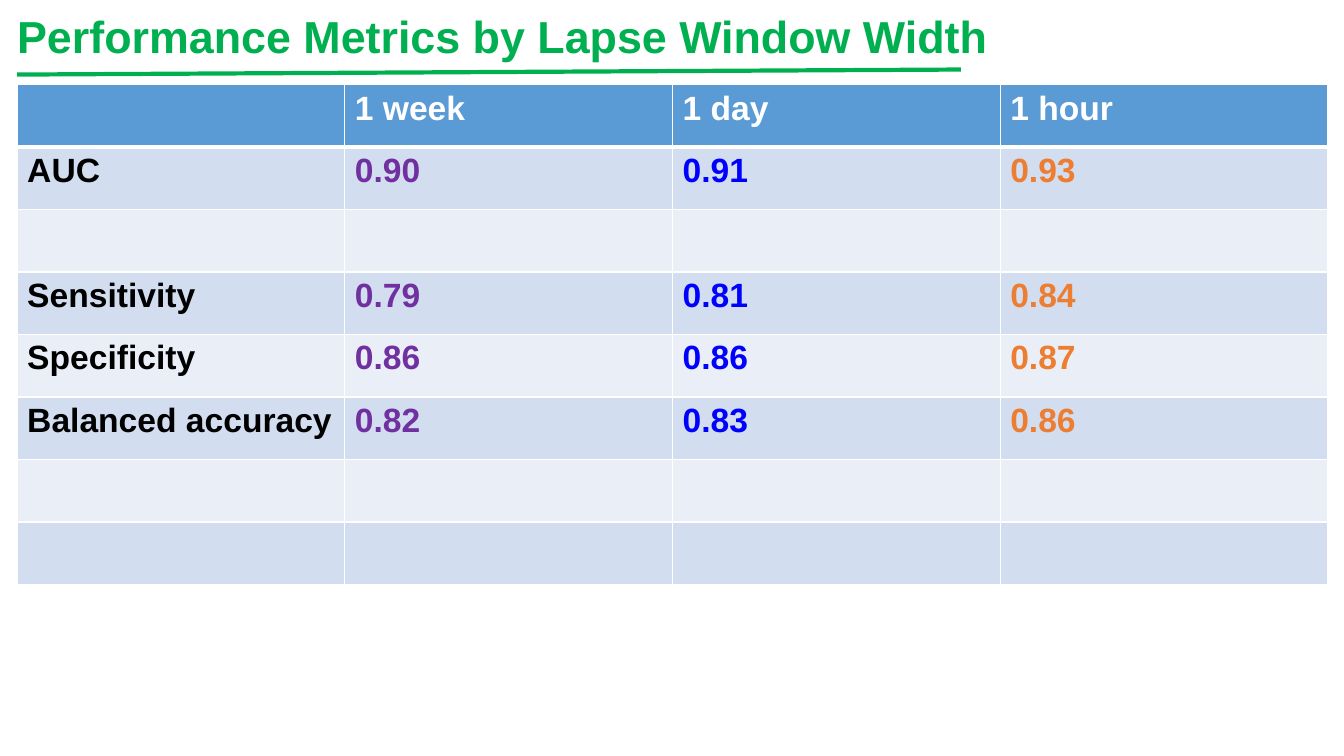
from dataclasses import dataclass

from lxml import etree
from pptx import Presentation
from pptx import util as u
from pptx.dml.color import RGBColor
from pptx.enum import shapes, text
from pptx.oxml.ns import qn


@dataclass(frozen=True)
class Theme:
    font: str = "Arial"
    title_size: int = 32
    table_size: int = 24
    accent: str = "00B050"
    border: str = "FFFFFF"
    header_fill: str = "5B9BD5"
    header_text: str = "FFFFFF"
    bands: tuple = ("D2DEEF", "EAEFF7")
    columns: tuple = ("000000", "7030A0", "0000FF", "ED7D31")
    thin: int = 1
    thick: int = 3


METRICS = [
    ("", "1 week", "1 day", "1 hour"),
    ("AUC", "0.90", "0.91", "0.93"),
    ("",) * 4,
    ("Sensitivity", "0.79", "0.81", "0.84"),
    ("Specificity", "0.86", "0.86", "0.87"),
    ("Balanced accuracy", "0.82", "0.83", "0.86"),
    ("",) * 4,
    ("",) * 4,
]


class MetricsSlide:
    def __init__(self, deck, theme):
        self.theme = theme
        self.slide = deck.slides.add_slide(deck.slide_layouts[5])

    def add_run(self, paragraph, words, size, color):
        run = paragraph.add_run()
        run.text = words
        run.font.name = self.theme.font
        run.font.size = u.Pt(size)
        run.font.bold = True
        run.font.color.rgb = RGBColor.from_string(color)

    def add_title(self, words, left, top, width, height):
        title = self.slide.shapes.title
        title.left, title.top = u.Inches(left), u.Inches(top)
        title.width, title.height = u.Inches(width), u.Inches(height)
        frame = title.text_frame
        frame.word_wrap = True
        frame.auto_size = text.MSO_AUTO_SIZE.SHAPE_TO_FIT_TEXT
        frame.vertical_anchor = text.MSO_ANCHOR.TOP
        heading = frame.paragraphs[0]
        heading.alignment = text.PP_ALIGN.LEFT
        self.add_run(heading, words, self.theme.title_size, self.theme.accent)

    def add_underline(self, start, end):
        underline = self.slide.shapes.add_connector(
            shapes.MSO_CONNECTOR.STRAIGHT, *map(u.Inches, start + end))
        underline.line.color.rgb = RGBColor.from_string(self.theme.accent)
        underline.line.width = u.Pt(self.theme.thick)
        etree.SubElement(underline.element.spPr, qn("a:effectLst"))

    def add_border(self, cell, side, width):
        properties = cell._tc.get_or_add_tcPr()
        edge = etree.SubElement(properties, qn(f"a:ln{side}"), w=str(u.Pt(width)))
        fill = etree.SubElement(edge, qn("a:solidFill"))
        etree.SubElement(fill, qn("a:srgbClr"), val=self.theme.border)

    def style_cell(self, cell, row):
        """Draw borders before the fill, the order the schema requires."""
        theme = self.theme
        widths = {
            "L": theme.thin,
            "R": theme.thin,
            "T": theme.thick if row == 1 else theme.thin,
            "B": theme.thick if row == 0 else theme.thin,
        }
        for side, width in widths.items():
            self.add_border(cell, side, width)
        color = theme.bands[(row - 1) % 2] if row else theme.header_fill
        cell.fill.solid()
        cell.fill.fore_color.rgb = RGBColor.from_string(color)

    def add_metrics(self, rows, left, top, column_width, row_height):
        column_count = len(rows[0])
        metrics = self.slide.shapes.add_table(
            len(rows), column_count, u.Inches(left), u.Inches(top),
            u.Inches(column_width * column_count),
            u.Inches(row_height * len(rows))).table
        for row, values in enumerate(rows):
            for column, value in enumerate(values):
                cell = metrics.cell(row, column)
                self.style_cell(cell, row)
                if value:
                    color = self.theme.columns[column] if row else self.theme.header_text
                    self.add_run(cell.text_frame.paragraphs[0], value,
                                 self.theme.table_size, color)


def main():
    deck = Presentation()
    deck.slide_width, deck.slide_height = u.Inches(13.33), u.Inches(7.5)
    page = MetricsSlide(deck, Theme())
    page.add_metrics(METRICS, 0.17, 0.84, 3.25, 0.62)
    page.add_underline((0.17, 0.74), (9.53, 0.69))
    page.add_title("Performance Metrics by Lapse Window Width", 0.07, 0.04, 13, 0.64)
    deck.save("out.pptx")


if __name__ == "__main__":
    main()
